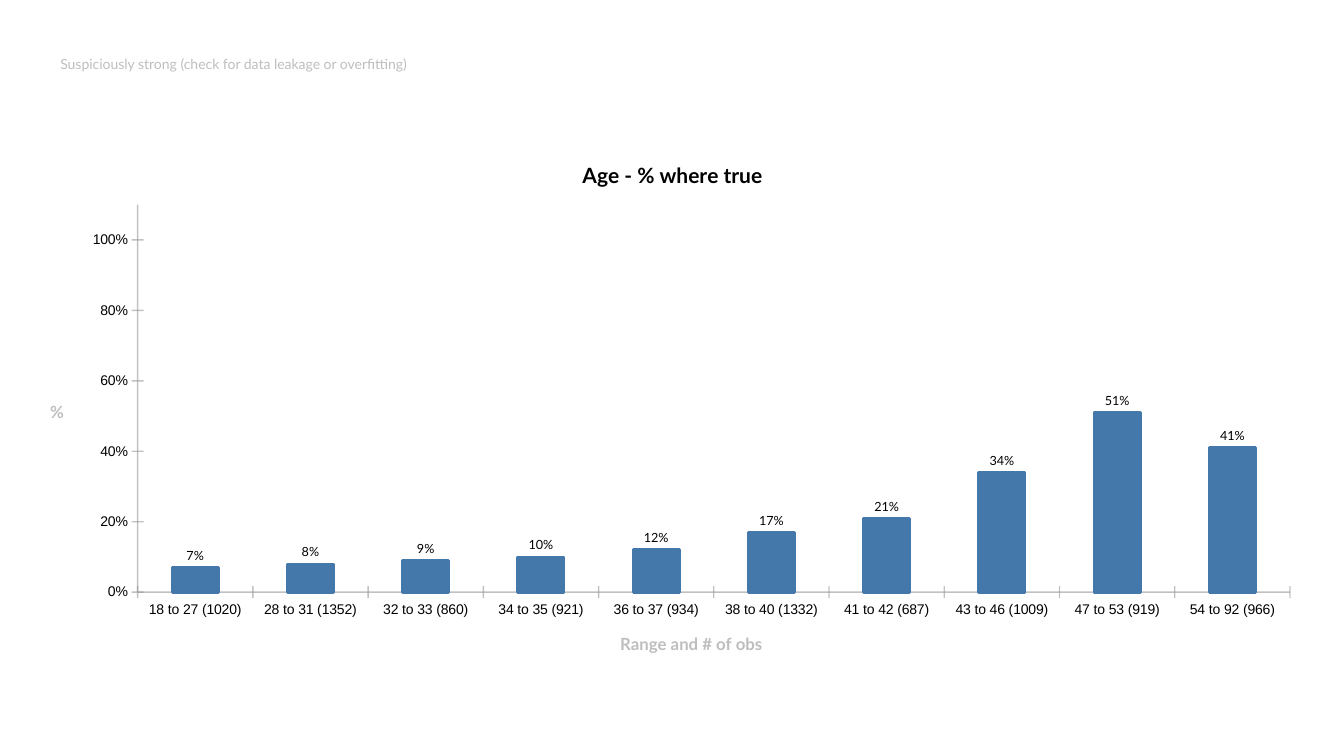
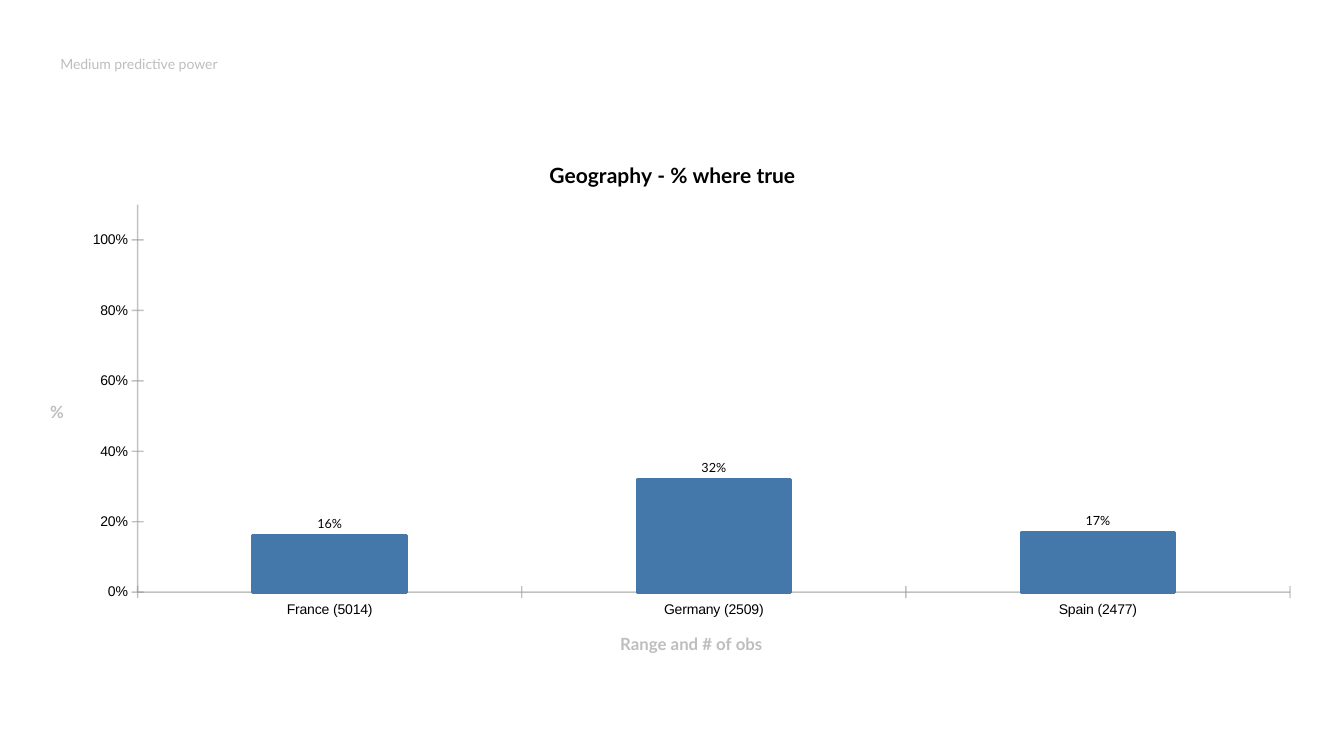
from dataclasses import dataclass

import lxml.etree
import pptx
import pptx.chart.data
import pptx.dml.color
import pptx.enum.chart
import pptx.oxml.ns
import pptx.util
from pptx.util import Inches

BLACK = pptx.dml.color.RGBColor(0x00, 0x00, 0x00)
PALE_GREY = pptx.dml.color.RGBColor(0xBE, 0xBE, 0xBE)
AXIS_GREY = pptx.dml.color.RGBColor(0x99, 0x99, 0x99)
BAR_BLUE = pptx.dml.color.RGBColor(0x44, 0x77, 0xAA)
TEXT_FONT = "Lato"
TICK_FONT = "Arial"


@dataclass(frozen=True)
class Feature:
    name: str
    verdict: str
    shares: dict[str, float]


FEATURES = [
    Feature(
        "Age",
        "Suspiciously strong (check for data leakage or overfitting)",
        {
            "18 to 27 (1020)": 0.07,
            "28 to 31 (1352)": 0.08,
            "32 to 33 (860)": 0.09,
            "34 to 35 (921)": 0.10,
            "36 to 37 (934)": 0.12,
            "38 to 40 (1332)": 0.17,
            "41 to 42 (687)": 0.21,
            "43 to 46 (1009)": 0.34,
            "47 to 53 (919)": 0.51,
            "54 to 92 (966)": 0.41,
        },
    ),
    Feature(
        "Geography",
        "Medium predictive power",
        {"France (5014)": 0.16, "Germany (2509)": 0.32, "Spain (2477)": 0.17},
    ),
]


def style_font(font, size: float, color=BLACK, bold: bool = False, name: str = TEXT_FONT) -> None:
    font.name = name
    font.size = pptx.util.Pt(size)
    font.bold = bold
    font.color.rgb = color


def write_text(frame, text: str, size: float, color=BLACK, bold: bool = False) -> None:
    frame.text = text
    style_font(frame.paragraphs[0].runs[0].font, size, color, bold)


def style_axis(axis, title: str) -> None:
    axis.has_major_gridlines = False
    axis.major_tick_mark = pptx.enum.chart.XL_TICK_MARK.CROSS
    axis.minor_tick_mark = pptx.enum.chart.XL_TICK_MARK.NONE
    style_font(axis.tick_labels.font, 10, name=TICK_FONT)
    write_text(axis.axis_title.text_frame, title, 12, PALE_GREY, bold=True)
    line = axis.format.line
    line.width = pptx.util.Pt(1)
    line.color.rgb = AXIS_GREY
    for color in axis._element.xpath("c:spPr/a:ln/a:solidFill/a:srgbClr"):
        lxml.etree.SubElement(color, pptx.oxml.ns.qn("a:alpha"), val="60000")


def add_share_chart(page, feature: Feature) -> None:
    data = pptx.chart.data.CategoryChartData(number_format="0%")
    data.categories = list(feature.shares)
    data.add_series("Series 1", list(feature.shares.values()))
    chart = page.shapes.add_chart(
        pptx.enum.chart.XL_CHART_TYPE.COLUMN_CLUSTERED,
        Inches(0.29), Inches(1.39), Inches(12.76), Inches(5.31), data,
    ).chart
    style_font(chart.font, 18)
    chart.has_legend = False
    write_text(chart.chart_title.text_frame, f"{feature.name} - % where true", 15, bold=True)
    chart.chart_title.include_in_layout = False

    style_axis(chart.category_axis, "Range and # of obs")
    percent_axis = chart.value_axis
    style_axis(percent_axis, "%")
    percent_axis.axis_title.text_frame._txBody.bodyPr.set("rot", "0")
    percent_axis.minimum_scale = 0
    percent_axis.maximum_scale = 1.1
    percent_axis.major_unit = 0.2
    percent_axis.tick_labels.number_format = "0%"
    percent_axis.tick_labels.number_format_is_linked = False

    plot = chart.plots[0]
    plot.gap_width = 150
    plot.vary_by_categories = False
    bars = plot.series[0]
    bars.format.fill.solid()
    bars.format.fill.fore_color.rgb = BAR_BLUE
    bars.format.line.color.rgb = BAR_BLUE
    bars.format.line.width = pptx.util.Pt(2)
    labels = bars.data_labels
    labels.show_value = True
    labels.position = pptx.enum.chart.XL_LABEL_POSITION.OUTSIDE_END
    labels.number_format = "0%"
    labels.number_format_is_linked = False
    style_font(labels.font, 9)


def add_verdict(page, verdict: str) -> None:
    box = page.shapes.add_textbox(Inches(0.5), Inches(0.5), Inches(6), Inches(1))
    box.text_frame.word_wrap = True
    write_text(box.text_frame, verdict, 10, PALE_GREY)


def main() -> None:
    deck = pptx.Presentation()
    deck.slide_width = Inches(13.33)
    deck.slide_height = Inches(7.5)
    for feature in FEATURES:
        page = deck.slides.add_slide(deck.slide_layouts[6])
        add_share_chart(page, feature)
        add_verdict(page, feature.verdict)
    deck.save("out.pptx")


if __name__ == "__main__":
    main()
